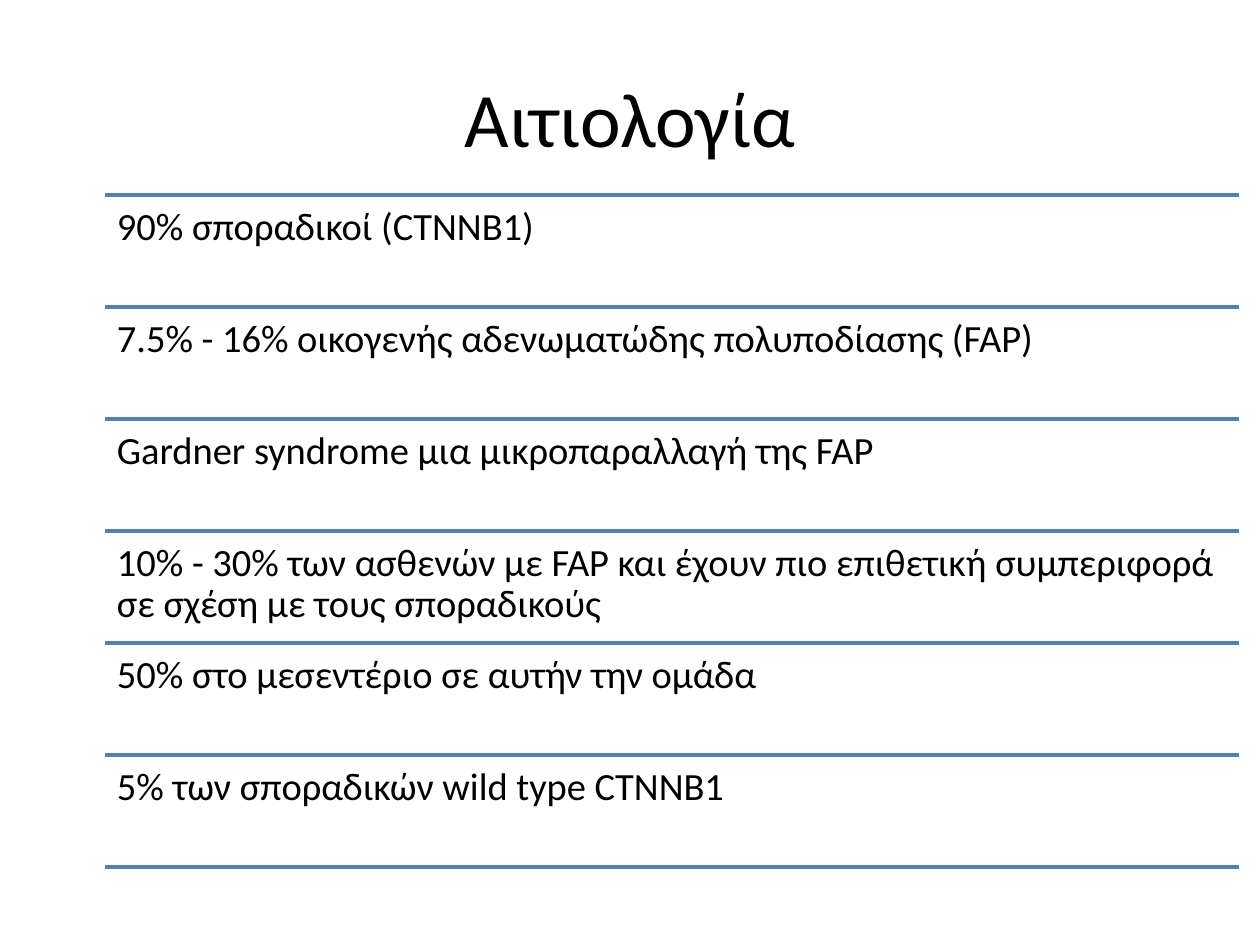
from dataclasses import dataclass

from lxml.etree import SubElement
from pptx import Presentation
from pptx.dml.color import RGBColor
from pptx.enum.shapes import MSO_CONNECTOR
from pptx.enum.text import MSO_ANCHOR, PP_ALIGN
from pptx.oxml.ns import qn
from pptx.slide import Slide
from pptx.text.text import _Paragraph
from pptx.util import Emu, Pt

PX_PER_INCH = 126
LIST_LEFT, LIST_TOP = 105, 195
LIST_WIDTH, ROW_HEIGHT = 1134, 112
BLACK, BLUE = "000000", "4F81BD"
CAUSES = [
    "90% σποραδικοί (CTNNB1)",
    "7.5% - 16% οικογενής αδενωματώδης πολυποδίασης (FAP)",
    "Gardner syndrome μια μικροπαραλλαγή της FAP",
    "10% - 30% των ασθενών με FAP και έχουν πιο επιθετική συμπεριφορά "
    "σε σχέση με τους σποραδικούς",
    "50% στο μεσεντέριο σε αυτήν την ομάδα",
    "5% των σποραδικών wild type CTNNB1",
]


@dataclass(frozen=True)
class TextBlock:
    """A block of text with its place, in px, and its type size, in points."""

    text: str
    left: int
    top: int
    width: int
    height: int
    size: int
    anchor: MSO_ANCHOR = MSO_ANCHOR.TOP


def px(length: int) -> Emu:
    """Turn a length in px into EMU."""
    return Emu(round(length * 914400 / PX_PER_INCH))


def colour(value: str) -> RGBColor:
    """Turn a hex string into a colour."""
    return RGBColor.from_string(value)


def draw_text(page: Slide, block: TextBlock) -> _Paragraph:
    """Draw a text block and return its paragraph."""
    box = page.shapes.add_textbox(
        px(block.left), px(block.top), px(block.width), px(block.height)
    )
    frame = box.text_frame
    frame.word_wrap = True
    frame.vertical_anchor = block.anchor
    frame.margin_left = frame.margin_right = px(12)
    frame.margin_top = frame.margin_bottom = px(12)
    frame.text = block.text
    paragraph = frame.paragraphs[0]
    for span in paragraph.runs:
        span.font.name = "Calibri"
        span.font.size = Pt(block.size)
        span.font.color.rgb = colour(BLACK)
    return paragraph


def draw_rule(page: Slide, top: int) -> None:
    """Draw a horizontal rule across the list."""
    rule = page.shapes.add_connector(
        MSO_CONNECTOR.STRAIGHT,
        px(LIST_LEFT), px(top), px(LIST_LEFT + LIST_WIDTH), px(top),
    )
    rule.line.color.rgb = colour(BLUE)
    rule.line.width = Pt(2)
    SubElement(rule._element.spPr, qn("a:effectLst"))


def main() -> None:
    """Build the slide on the causes and save it."""
    deck = Presentation()
    deck.slide_width, deck.slide_height = px(1260), px(945)
    page = deck.slides.add_slide(deck.slide_layouts[6])

    title = draw_text(
        page, TextBlock("Αιτιολογία", 63, 38, 1134, 157, 44, MSO_ANCHOR.MIDDLE)
    )
    title.alignment = PP_ALIGN.CENTER

    for row, cause in enumerate(CAUSES):
        top = LIST_TOP + row * ROW_HEIGHT
        draw_rule(page, top)
        entry = draw_text(
            page, TextBlock(cause, LIST_LEFT, top, LIST_WIDTH, ROW_HEIGHT, 22)
        )
        entry.line_spacing = 0.9
    draw_rule(page, LIST_TOP + len(CAUSES) * ROW_HEIGHT)

    deck.save("out.pptx")


if __name__ == "__main__":
    main()
